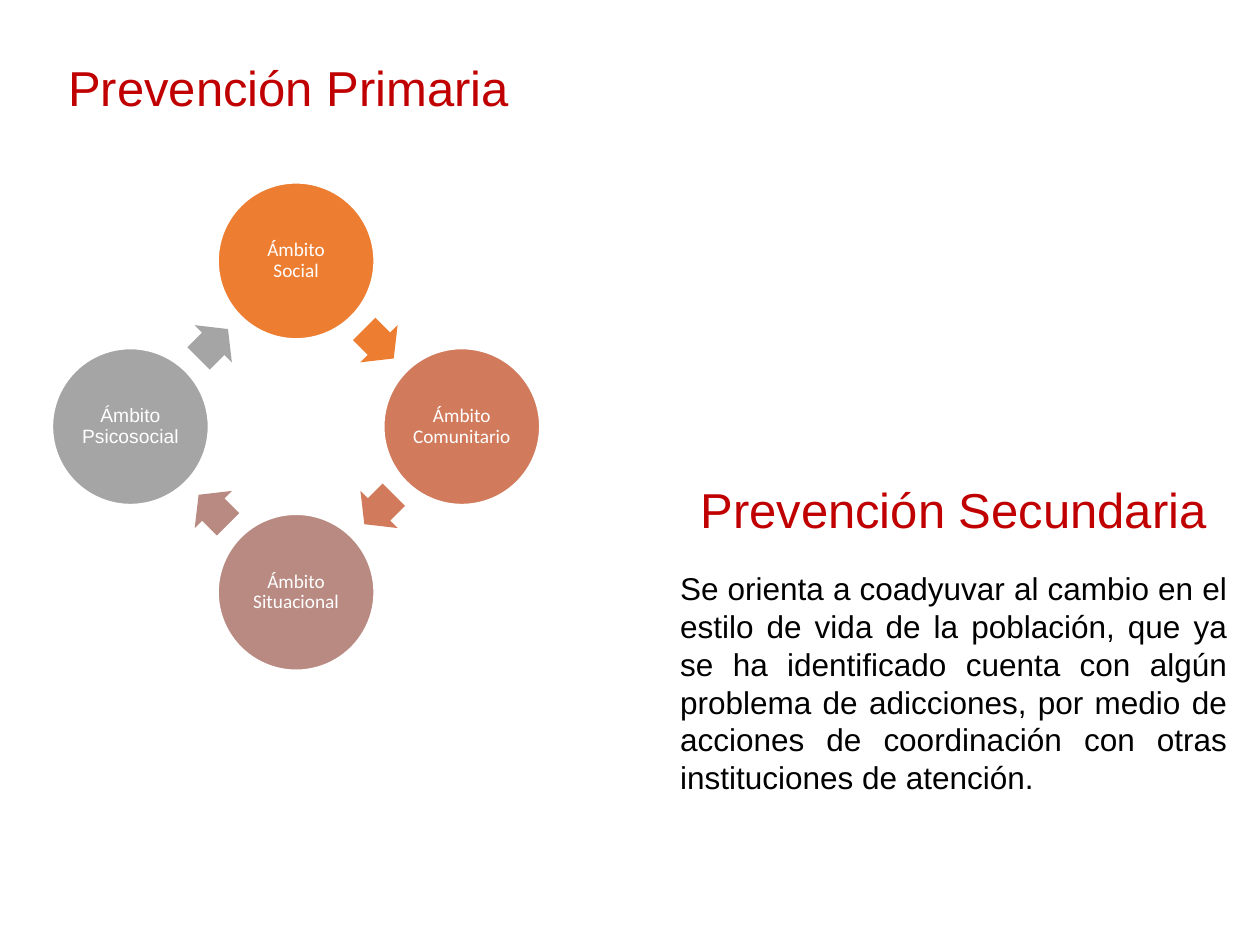
from math import cos, radians, sin

from pptx import Presentation
from pptx.dml.color import RGBColor
from pptx.enum.shapes import MSO_SHAPE
from pptx.enum.text import MSO_ANCHOR, PP_ALIGN
from pptx.util import Cm, Pt

CENTER_X, CENTER_Y = 5.97, 8.6
RING_RADIUS = 3.34
CIRCLE_SIZE = 3.15
ARROW_WIDTH, ARROW_HEIGHT = 0.84, 1.06
INSET = 0.05

SCOPES = [
    ("Ámbito Social", "ED7D31", "Calibri"),
    ("Ámbito Comunitario", "D17B5C", "Calibri"),
    ("Ámbito Situacional", "B98A82", "Calibri"),
    ("Ámbito Psicosocial", "A5A5A5", "Arial"),
]
SECONDARY_TEXT = (
    "Se orienta a coadyuvar al cambio en el estilo de vida de la población, "
    "que ya se ha identificado cuenta con algún problema de adicciones, por "
    "medio de acciones de coordinación con otras instituciones de atención."
)


def color(hex_value):
    """Turn a hex string into a color."""
    return RGBColor.from_string(hex_value)


def set_attributes(target, values):
    """Set every attribute named in a dict of format values."""
    for name, value in values.items():
        setattr(target, name, value)


def write(shape, text, size, font, hex_value, alignment):
    """Write one formatted paragraph into a shape."""
    shape.text_frame.word_wrap = True
    paragraph = shape.text_frame.paragraphs[0]
    paragraph.text = text
    paragraph.alignment = alignment
    set_attributes(paragraph.font, {"size": Pt(size), "name": font})
    paragraph.font.color.rgb = color(hex_value)
    return paragraph


def add_text(slide, box, text, size, hex_value, alignment):
    """Add a text box at left, top, width, height in centimetres."""
    shape = slide.shapes.add_textbox(*map(Cm, box))
    write(shape, text, size, "Arial", hex_value, alignment)


def add_centered_shape(slide, kind, x, y, width, height, hex_value):
    """Add a filled preset shape around a centre point."""
    shape = slide.shapes.add_shape(
        kind, Cm(x - width / 2), Cm(y - height / 2), Cm(width), Cm(height)
    )
    shape.shadow.inherit = False
    shape.fill.solid()
    shape.fill.fore_color.rgb = color(hex_value)
    return shape


def ring_point(angle, radius):
    """Return the point at a clockwise angle from the top of the ring."""
    turn = radians(angle)
    return CENTER_X + radius * sin(turn), CENTER_Y - radius * cos(turn)


def add_circle(slide, angle, text, hex_value, font):
    """Add a labelled circle on the ring."""
    x, y = ring_point(angle, RING_RADIUS)
    circle = add_centered_shape(
        slide, MSO_SHAPE.OVAL, x, y, CIRCLE_SIZE, CIRCLE_SIZE, hex_value
    )
    circle.line.color.rgb = color("FFFFFF")
    circle.line.width = Pt(1)
    sides = ("left", "top", "right", "bottom")
    set_attributes(circle.text_frame, {f"margin_{side}": Cm(INSET) for side in sides})
    circle.text_frame.vertical_anchor = MSO_ANCHOR.MIDDLE
    paragraph = write(circle, text, 11, font, "FFFFFF", PP_ALIGN.CENTER)
    paragraph.line_spacing = 0.9


def add_arrow(slide, angle, hex_value):
    """Add an arrow pointing clockwise, halfway between two circles."""
    x, y = ring_point(angle, RING_RADIUS * cos(radians(45)))
    arrow = add_centered_shape(
        slide, MSO_SHAPE.RIGHT_ARROW, x, y, ARROW_WIDTH, ARROW_HEIGHT, hex_value
    )
    arrow.adjustments[0] = 0.6
    arrow.adjustments[1] = 0.5
    arrow.line.fill.background()
    arrow.rotation = angle


def add_cycle(slide):
    """Add the ring of circles, each followed by its arrow."""
    step = 360 / len(SCOPES)
    for index, (text, hex_value, font) in enumerate(SCOPES):
        add_circle(slide, index * step, text, hex_value, font)
        add_arrow(slide, (index + 0.5) * step, hex_value)


def main():
    """Build and save the slide."""
    presentation = Presentation()
    set_attributes(presentation, {"slide_width": Cm(25.4), "slide_height": Cm(19.05)})
    slide = presentation.slides.add_slide(presentation.slide_layouts[6])
    add_text(slide, (13.46, 11.35, 11.53, 5.64), SECONDARY_TEXT, 18, "000000", PP_ALIGN.JUSTIFY)
    add_cycle(slide)
    headings = [
        ("Prevención Primaria ", (-0.79, 1.04, 13.49, 1.45)),
        ("Prevención Secundaria", (12.73, 9.55, 12.98, 1.45)),
    ]
    for text, box in headings:
        add_text(slide, box, text, 28, "C00000", PP_ALIGN.CENTER)
    presentation.save("out.pptx")


if __name__ == "__main__":
    main()
